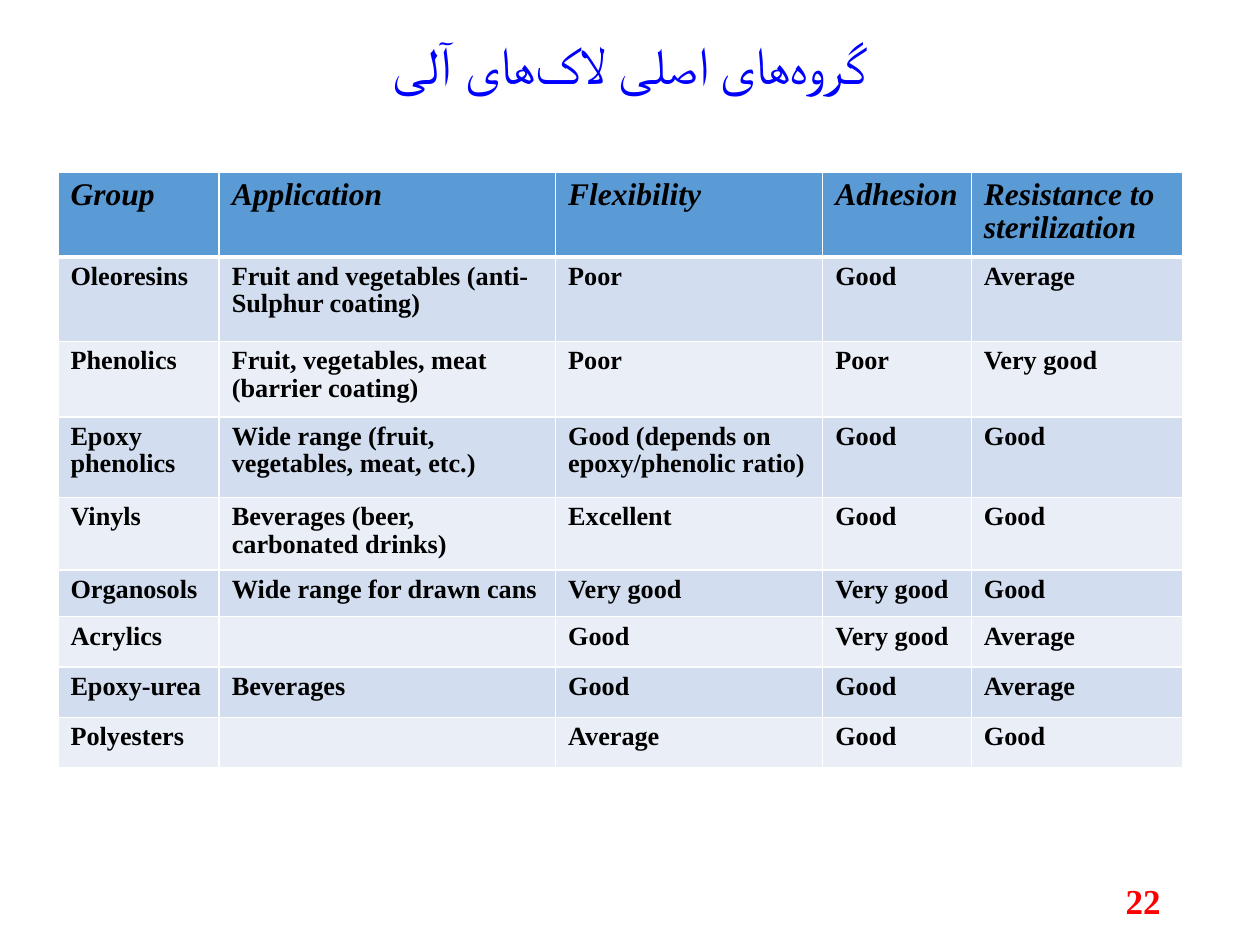
from lxml.etree import SubElement
from pptx import Presentation
from pptx.dml.color import RGBColor
from pptx.enum.text import MSO_ANCHOR as Anchor, PP_ALIGN as Align
from pptx.oxml.ns import qn
from pptx.util import Inches, Pt

BLACK = RGBColor(0x00, 0x00, 0x00)
WHITE = RGBColor(0xFF, 0xFF, 0xFF)
BLUE = RGBColor(0x00, 0x00, 0xFF)
RED = RGBColor(0xFF, 0x00, 0x00)
HEADER = RGBColor(0x5B, 0x9B, 0xD5)
BANDS = [RGBColor(0xEA, 0xEF, 0xF7), RGBColor(0xD2, 0xDE, 0xEF)]

TITLE = {"size": Pt(30), "color": BLUE}
NUMBER = {"size": Pt(20), "bold": True, "color": RED}
HEAD = {"size": Pt(18), "bold": True, "italic": True, "color": BLACK}
BODY = {"size": Pt(15), "bold": True, "italic": False, "color": BLACK}

NON_JOINER = chr(0x200C)
HEADING = f"گروه{NON_JOINER}های اصلی لاک{NON_JOINER}های آلی"
COLUMNS = [12.8, 26.7, 21.2, 11.8, 16.8]
ROWS = [7.33, 8.93, 8, 8.53, 5.33, 4.93, 5.33, 5.33, 5.33]
LACQUERS = [
    ["Group", "Application", "Flexibility", "Adhesion", "Resistance to\nsterilization"],
    ["Oleoresins", "Fruit and vegetables (anti-Sulphur coating)", "Poor", "Good", "Average"],
    ["Phenolics", "Fruit, vegetables, meat (barrier coating)", "Poor", "Poor", "Very good"],
    ["Epoxy phenolics", "Wide range (fruit, vegetables, meat, etc.)",
     "Good (depends on epoxy/phenolic ratio)", "Good", "Good"],
    ["Vinyls", "Beverages (beer, carbonated drinks)", "Excellent", "Good", "Good"],
    ["Organosols", "Wide range for drawn cans", "Very good", "Very good", "Good"],
    ["Acrylics", "", "Good", "Very good", "Average"],
    ["Epoxy-urea", "Beverages", "Good", "Good", "Average"],
    ["Polyesters", "", "Average", "Good", "Good"],
]

deck = Presentation()
deck.slide_width, deck.slide_height = Inches(10), Inches(7.5)
page = deck.slides.add_slide(deck.slide_layouts[6])
ACROSS, DOWN = deck.slide_width / 100, deck.slide_height / 100


def place(left, top, width, height):
    return int(left * ACROSS), int(top * DOWN), int(width * ACROSS), int(height * DOWN)


def write(frame, text, look, **layout):
    frame.text = text
    for para in frame.paragraphs:
        for name, value in layout.items():
            setattr(para, name, value)
        for span in para.runs:
            span.font.name = "Times New Roman"
            for name, value in look.items():
                if name == "color":
                    span.font.color.rgb = value
                else:
                    setattr(span.font, name, value)


title = page.shapes.add_textbox(*place(6.9, 3.73, 86.2, 6.93))
title.fill.solid()
title.fill.fore_color.rgb = WHITE
number = page.shapes.add_textbox(*place(70.6, 92.67, 22.5, 5.33))
for box, text, look, layout in [
    (title, HEADING, TITLE, {"alignment": Align.CENTER, "line_spacing": 0.9}),
    (number, "22", NUMBER, {"alignment": Align.RIGHT}),
]:
    box.text_frame.word_wrap = True
    box.text_frame.vertical_anchor = Anchor.MIDDLE
    write(box.text_frame, text, look, **layout)
title.text_frame.paragraphs[0]._p.get_or_add_pPr().set("rtl", "1")

table = page.shapes.add_table(
    len(ROWS), len(COLUMNS), *place(4.6, 18.27, sum(COLUMNS), sum(ROWS))
).table
for column, share in zip(table.columns, COLUMNS):
    column.width = int(share * ACROSS)
for row, share in zip(table.rows, ROWS):
    row.height = int(share * DOWN)

for r, texts in enumerate(LACQUERS):
    for c, text in enumerate(texts):
        cell = table.cell(r, c)
        if text:
            write(cell.text_frame, text, BODY if r else HEAD, line_spacing=0.95)
        properties = cell._tc.get_or_add_tcPr()
        for side in ("lnL", "lnR", "lnT", "lnB"):
            thick = (r, side) in [(0, "lnB"), (1, "lnT")]
            line = SubElement(properties, qn(f"a:{side}"), w=str(Pt(3 if thick else 1)))
            SubElement(SubElement(line, qn("a:solidFill")), qn("a:srgbClr"), val=str(WHITE))
        cell.fill.solid()
        cell.fill.fore_color.rgb = BANDS[r % 2] if r else HEADER

deck.save("out.pptx")
